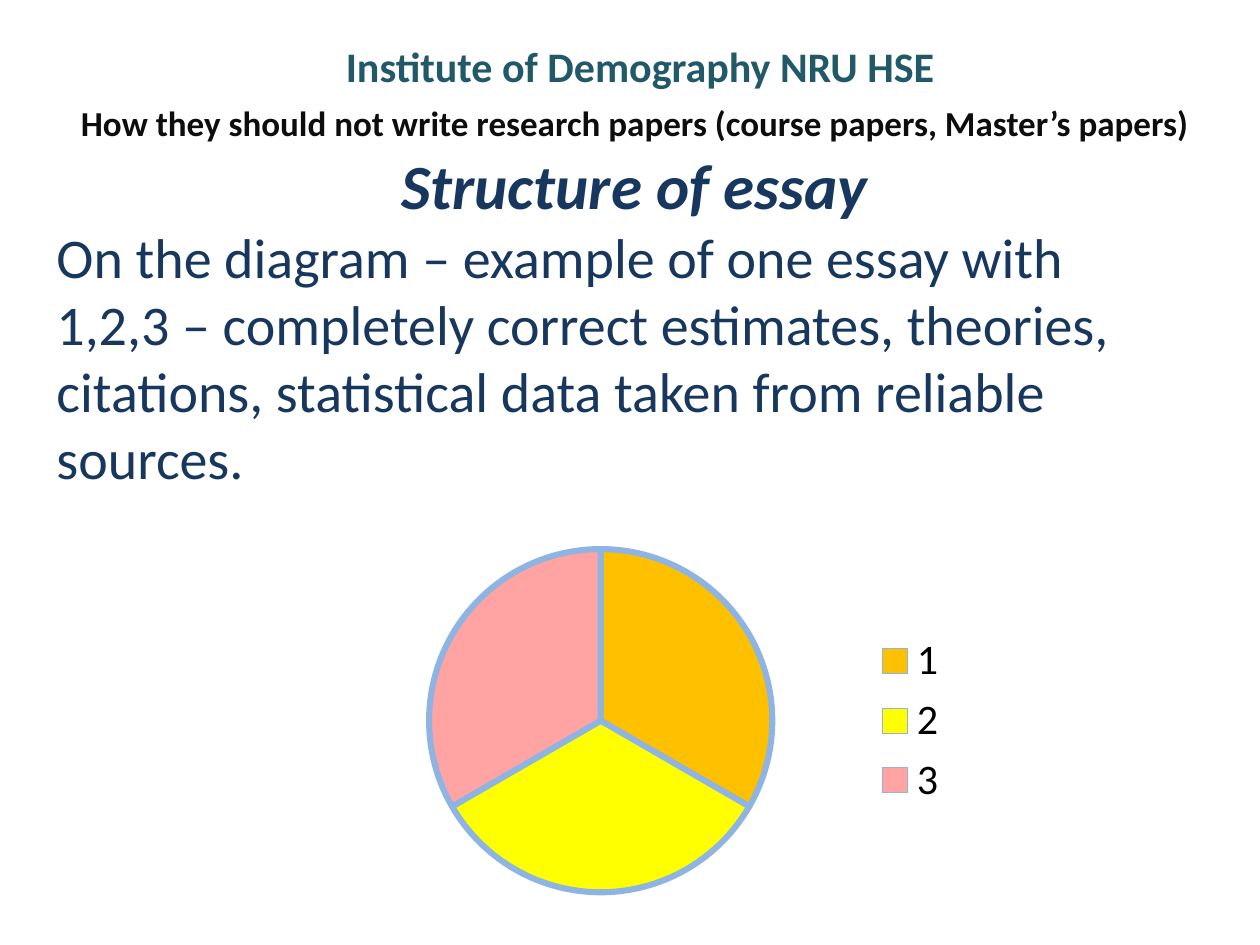
from dataclasses import dataclass

from pptx import Presentation
from pptx import util as u
from pptx.chart.data import CategoryChartData
from pptx.dml.color import RGBColor
from pptx.enum import chart as ch
from pptx.enum import text


@dataclass(frozen=True)
class Theme:
    font: str = "Calibri"
    teal: str = "215968"
    ink: str = "0D0D0D"
    navy: str = "17375E"
    black: str = "000000"
    outline: str = "8EB4E3"
    slices: tuple = ("FFC000", "FFFF00", "FFA3A3")
    title: int = 24
    subtitle: int = 20
    heading: int = 36
    body: int = 32
    legend: int = 24


THEME = Theme()


def style_font(font, size, color, bold=False, italic=False):
    font.name = THEME.font
    font.size = u.Pt(size)
    font.bold = bold
    font.italic = italic
    font.color.rgb = RGBColor.from_string(color)


def write_paragraph(p, content, size, color, align, bold=False, italic=False):
    p.text = content
    p.alignment = align
    for r in p.runs:
        style_font(r.font, size, color, bold, italic)


def place(sp, left, top, width, height):
    sp.left, sp.top = u.Inches(left), u.Inches(top)
    sp.width, sp.height = u.Inches(width), u.Inches(height)


def set_title(s, content):
    sp = s.shapes.title
    place(sp, 0.83, 0.21, 8.5, 0.63)
    tf = sp.text_frame
    tf.auto_size = text.MSO_AUTO_SIZE.NONE
    tf.vertical_anchor = text.MSO_ANCHOR.MIDDLE
    write_paragraph(tf.paragraphs[0], content, THEME.title, THEME.teal,
                    text.PP_ALIGN.CENTER, bold=True)


def add_text_box(s, left, top, width, height, anchor):
    sp = s.shapes.add_textbox(*map(u.Inches, (left, top, width, height)))
    tf = sp.text_frame
    tf.word_wrap = True
    tf.vertical_anchor = anchor
    return tf


def add_subtitle(s, content):
    tf = add_text_box(s, 0.51, 0.76, 9.06, 0.55, text.MSO_ANCHOR.TOP)
    p = tf.paragraphs[0]
    write_paragraph(p, content, THEME.subtitle, THEME.ink,
                    text.PP_ALIGN.CENTER, bold=True)
    p.space_before = u.Pt(4)


def add_explanation(s, heading, body):
    tf = add_text_box(s, 0.35, 1.23, 9.37, 2.6, text.MSO_ANCHOR.MIDDLE)
    write_paragraph(tf.paragraphs[0], heading, THEME.heading, THEME.navy,
                    text.PP_ALIGN.CENTER, bold=True, italic=True)
    write_paragraph(tf.add_paragraph(), body, THEME.body, THEME.navy,
                    text.PP_ALIGN.LEFT)


def add_pie(s, categories, values):
    data = CategoryChartData()
    data.categories = categories
    data.add_series("Series 1", values)
    chart = s.shapes.add_chart(
        ch.XL_CHART_TYPE.PIE, u.Inches(2.64), u.Inches(4.22),
        u.Inches(5), u.Inches(3), data).chart
    chart.has_title = False
    chart.has_legend = True
    chart.legend.position = ch.XL_LEGEND_POSITION.RIGHT
    chart.legend.include_in_layout = False
    style_font(chart.legend.font, THEME.legend, THEME.black)

    plot = chart.plots[0]
    plot.vary_by_categories = True
    for i, color in enumerate(THEME.slices):
        fmt = plot.series[0].points[i].format
        fmt.fill.solid()
        fmt.fill.fore_color.rgb = RGBColor.from_string(color)
        fmt.line.color.rgb = RGBColor.from_string(THEME.outline)
        fmt.line.width = u.Pt(3.5)


def main():
    prs = Presentation()
    prs.slide_width, prs.slide_height = u.Inches(10), u.Inches(7.5)
    s = prs.slides.add_slide(prs.slide_layouts.get_by_name("Title Only"))
    set_title(s, "Institute of Demography NRU HSE")
    add_subtitle(s, "How they should not write research papers "
                    "(course papers, Master’s papers)")
    add_explanation(
        s, "Structure of essay",
        "On the diagram – example of one essay with\v"
        "1,2,3 – completely correct estimates, theories, citations, "
        "statistical data taken from reliable sources.")
    add_pie(s, ("1", "2", "3"), (33, 33, 33))
    prs.save("out.pptx")


if __name__ == "__main__":
    main()
